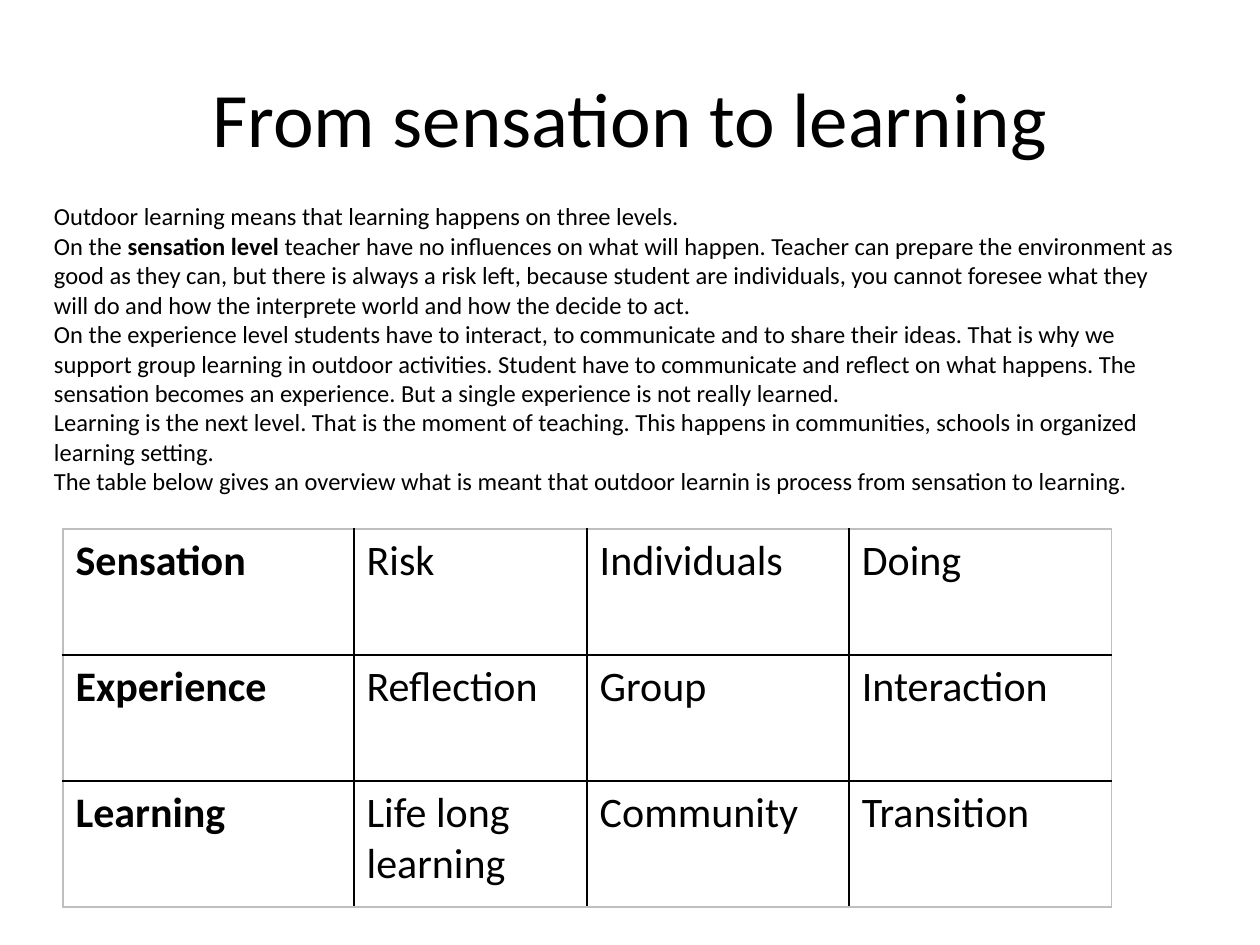
import pptx
import pptx.util
import pptx.dml.color
import pptx.enum.text
from lxml import etree
from pptx.util import Inches, Pt

FONT = "Calibri"
BLACK, GREY = "000000", "BFBFBF"
A = "http://schemas.openxmlformats.org/drawingml/2006/main"

TITLE = "From sensation to learning"
# Each paragraph is a list of (text, bold) runs.
BODY = [
    [("Outdoor learning means that learning happens on three levels.", False)],
    [("On the ", False), ("sensation level ", True),
     ("teacher have no influences on what will happen. Teacher can prepare the "
      "environment as good as they can, but there is always a risk left, because "
      "student are individuals, you cannot foresee what they will do and how the "
      "interprete world and how the decide to act.", False)],
    [("On the experience level students have to interact, to communicate and to "
      "share their ideas. That is why we support group learning in outdoor "
      "activities. Student have to communicate and reflect on what happens. The "
      "sensation becomes an experience. But a single experience is not really "
      "learned.", False)],
    [("Learning is the next level. That is the moment of teaching. This happens in "
      "communities, schools in organized learning setting.", False)],
    [("The table below gives an overview what is meant that outdoor learnin is "
      "process from sensation to learning.", False)],
]
LEVELS = [
    ["Sensation", "Risk", "Individuals", "Doing"],
    ["Experience", "Reflection", "Group", "Interaction"],
    ["Learning", "Life long learning", "Community", "Transition"],
]
COL_WIDTHS = [2.31, 1.85, 2.08, 2.08]
ROW_HEIGHT = 1


def rgb(value):
    return pptx.dml.color.RGBColor.from_string(value)


def add_run(p, text, size, bold=False, color=BLACK):
    r = p.add_run()
    r.text = text
    r.font.name, r.font.size, r.font.bold = FONT, Pt(size), bold
    r.font.color.rgb = rgb(color)


def set_borders(cell, colors, width=1):
    """Draw the left, right, top and bottom borders in the given colours."""
    tcPr = cell._tc.get_or_add_tcPr()
    for i, (side, color) in enumerate(zip("LRTB", colors)):
        ln = etree.Element(f"{{{A}}}ln{side}", w=str(Pt(width)))
        fill = etree.SubElement(ln, f"{{{A}}}solidFill")
        etree.SubElement(fill, f"{{{A}}}srgbClr", val=color)
        tcPr.insert(i, ln)


prs = pptx.Presentation()
prs.slide_width, prs.slide_height = Inches(10), Inches(7.5)
s = prs.slides.add_slide(prs.slide_layouts[5])

title = s.shapes.title
title.left, title.top = Inches(0.5), Inches(0.3)
title.width, title.height = Inches(9), Inches(1.25)
tf = title.text_frame
tf.vertical_anchor = pptx.enum.text.MSO_ANCHOR.MIDDLE
tf.paragraphs[0].alignment = pptx.enum.text.PP_ALIGN.CENTER
add_run(tf.paragraphs[0], TITLE, size=44)

n_rows, n_cols = len(LEVELS), len(COL_WIDTHS)
table = s.shapes.add_table(n_rows, n_cols, Inches(0.5), Inches(4.2),
                           Inches(sum(COL_WIDTHS)), Inches(n_rows * ROW_HEIGHT)).table
table.first_row = table.horz_banding = False
for col, width in zip(table.columns, COL_WIDTHS):
    col.width = Inches(width)
for i, row in enumerate(LEVELS):
    table.rows[i].height = Inches(ROW_HEIGHT)
    for j, text in enumerate(row):
        cell = table.cell(i, j)
        cell.fill.background()
        add_run(cell.text_frame.paragraphs[0], text, size=24, bold=j == 0)
        on_edge = (j == 0, j == n_cols - 1, i == 0, i == n_rows - 1)
        set_borders(cell, [GREY if edge else BLACK for edge in on_edge])

body = s.shapes.add_textbox(Inches(0.33), Inches(1.55), Inches(9.17), Inches(3))
tf = body.text_frame
tf.word_wrap = True
tf.auto_size = pptx.enum.text.MSO_AUTO_SIZE.SHAPE_TO_FIT_TEXT
for i, runs in enumerate(BODY):
    p = tf.add_paragraph() if i else tf.paragraphs[0]
    for text, bold in runs:
        add_run(p, text, size=14, bold=bold)

prs.save("out.pptx")
